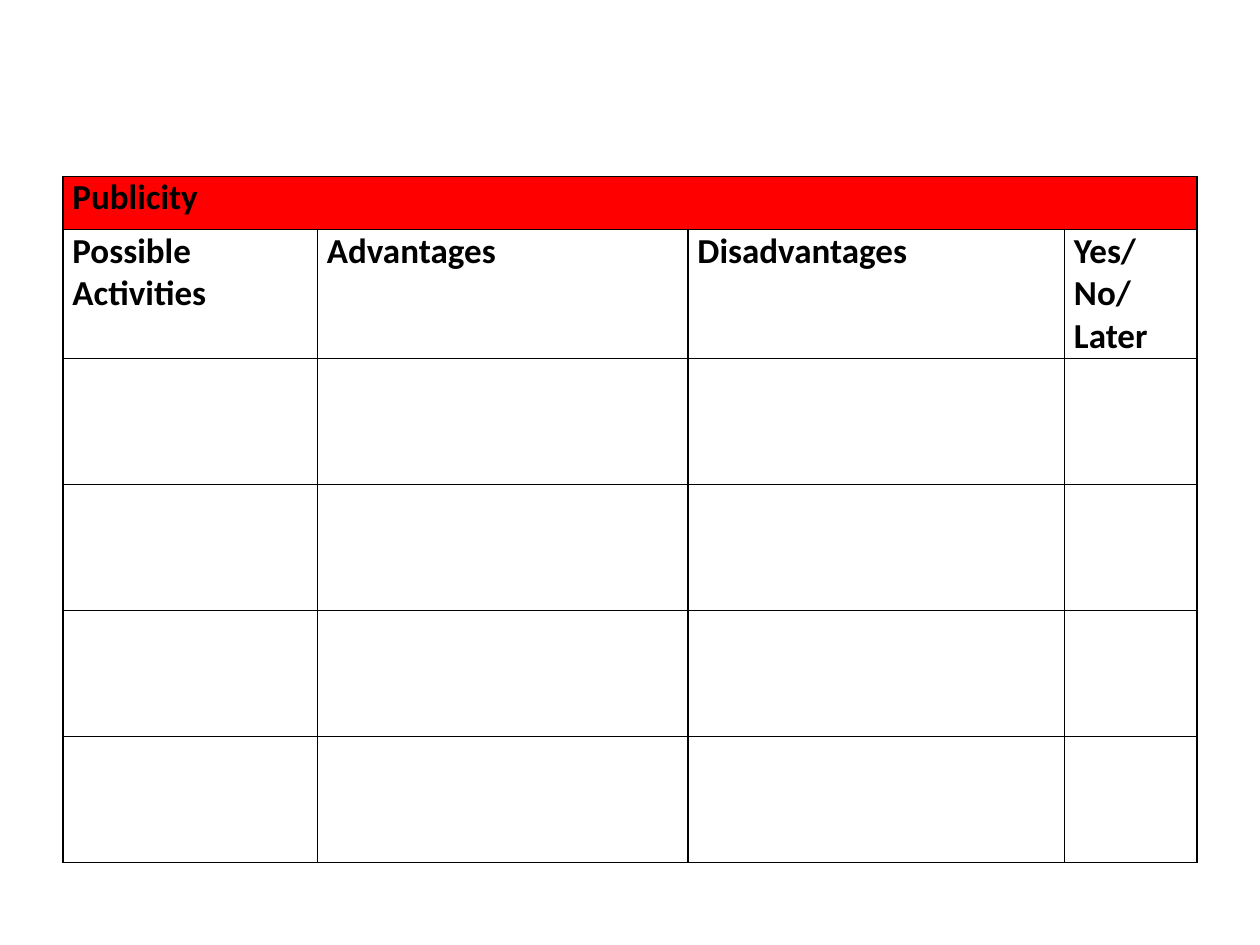
from lxml.etree import SubElement
from pptx import Presentation
from pptx.dml.color import RGBColor
from pptx.oxml.ns import qn
from pptx.util import Cm, Pt

BLACK = RGBColor(0x00, 0x00, 0x00)
RED = RGBColor(0xFF, 0x00, 0x00)

TITLE = "Publicity"
HEADINGS = ["Possible Activities", "Advantages", "Disadvantages", "Yes/No/ Later"]
COLUMN_WIDTHS = [5.13, 7.47, 7.59, 2.67]
ROW_HEIGHTS = [1.07, 2.16] + [2.54] * 4


class SlideBuilder:
    font_name = "Calibri"
    font_size = Pt(20)
    border_width = Pt(1)
    side_margin = Cm(0.19)

    def __init__(self, slide):
        self.slide = slide

    def add_table(self, left, top, column_widths, row_heights):
        shape = self.slide.shapes.add_table(
            len(row_heights), len(column_widths), Cm(left), Cm(top),
            Cm(sum(column_widths)), Cm(sum(row_heights)))
        table = shape.table
        table.first_row = table.horz_banding = False
        for column, width in zip(table.columns, column_widths):
            column.width = Cm(width)
        for row, height in zip(table.rows, row_heights):
            row.height = Cm(height)
        for cell in table.iter_cells():
            self.style_cell(cell)
        return table

    def style_cell(self, cell):
        cell.margin_left = cell.margin_right = self.side_margin
        cell.margin_top = cell.margin_bottom = 0
        self.add_borders(cell)
        cell.fill.background()

    def add_borders(self, cell):
        properties = cell._tc.get_or_add_tcPr()
        for side in ("a:lnL", "a:lnR", "a:lnT", "a:lnB"):
            line = SubElement(properties, qn(side), w=str(self.border_width))
            fill = SubElement(line, qn("a:solidFill"))
            SubElement(fill, qn("a:srgbClr"), val=str(BLACK))

    def write_cell(self, cell, text):
        cell.text = text
        font = cell.text_frame.paragraphs[0].font
        font.name = self.font_name
        font.size = self.font_size
        font.bold = True
        font.color.rgb = BLACK


def main():
    presentation = Presentation()
    presentation.slide_width = Cm(25.4)
    presentation.slide_height = Cm(19.05)
    builder = SlideBuilder(presentation.slides.add_slide(presentation.slide_layouts[6]))

    table = builder.add_table(1.27, 3.56, COLUMN_WIDTHS, ROW_HEIGHTS)
    title_cell = table.cell(0, 0)
    title_cell.merge(table.cell(0, len(COLUMN_WIDTHS) - 1))
    title_cell.fill.solid()
    title_cell.fill.fore_color.rgb = RED
    builder.write_cell(title_cell, TITLE)
    for column, heading in enumerate(HEADINGS):
        builder.write_cell(table.cell(1, column), heading)

    presentation.save("out.pptx")


if __name__ == "__main__":
    main()
